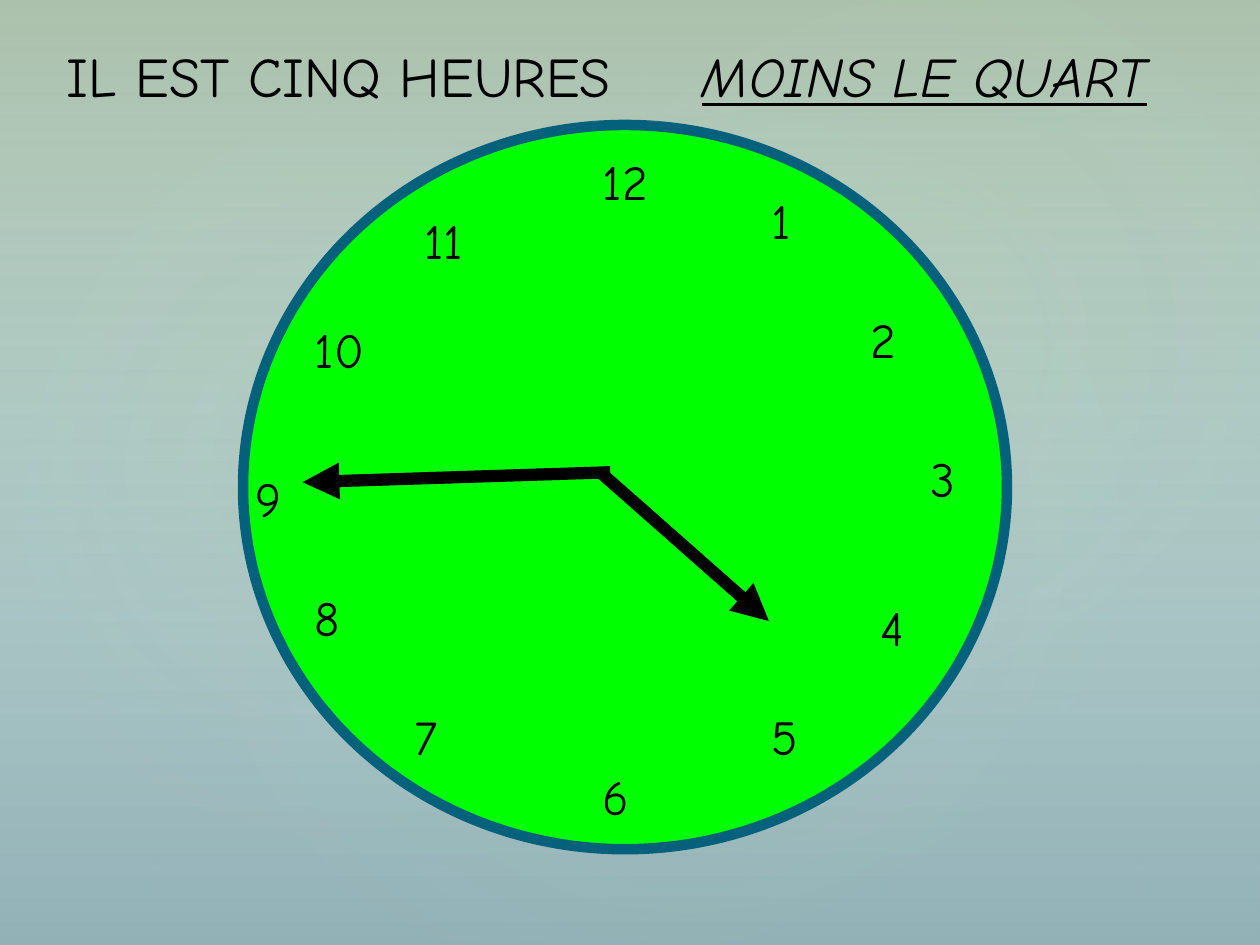
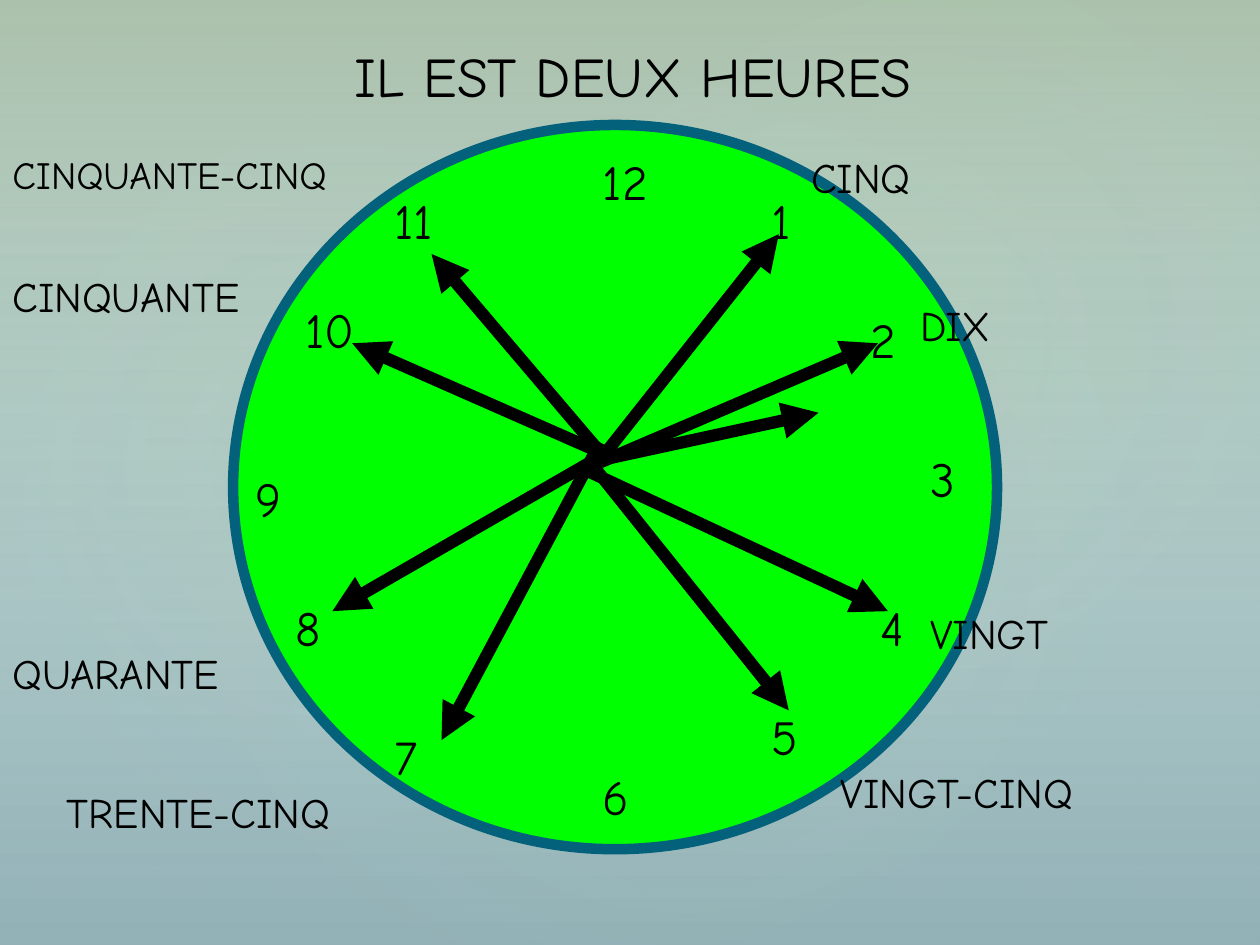
from dataclasses import dataclass

from lxml.etree import SubElement
from pptx import Presentation
from pptx.dml.color import RGBColor
from pptx.enum.shapes import MSO_CONNECTOR, MSO_SHAPE
from pptx.enum.text import MSO_AUTO_SIZE
from pptx.oxml.ns import qn
from pptx.util import Cm, Pt


@dataclass(frozen=True)
class Theme:
    """Colours, font and type sizes of the deck."""

    font: str = "Comic Neue"
    ink: str = "000000"
    face: str = "00FF00"
    rim: str = "04617B"
    sky_top: str = "DDF6F9"
    sky_bottom: str = "8BAAAF"
    olive: str = "546422"
    mist: str = "DBF5F9"
    lime: str = "C9DA92"
    title_size: int = 32
    number_size: int = 28
    label_size: int = 24
    long_label_size: int = 22
    rim_width: int = 6
    hand_width: int = 7


THEME = Theme()
WIDTH, HEIGHT = 25.4, 19.05

GLOWS = [
    (3.81, 2.9, 20.12, 15.85, 328.7, 7),
    (-0.76, 3.25, 15.39, 12.45, 294.3, 8),
    (9.09, 0.33, 18.01, 13.21, 328.7, 8),
]

NUMBERS = {
    12: (11.9, 2.92), 1: (15.3, 3.72), 2: (17.3, 6.12), 3: (18.5, 8.92),
    4: (17.5, 11.92), 5: (15.3, 14.12), 6: (11.9, 15.32), 7: (8.1, 14.12),
    8: (6.1, 11.72), 9: (4.9, 9.32), 10: (6.1, 6.32), 11: (8.3, 4.12),
}
MINUTE_NUMBERS = NUMBERS | {
    7: (7.7, 14.52), 8: (5.7, 11.92), 10: (5.9, 5.92), 11: (7.7, 3.72),
}

QUARTER_HANDS = [
    ((6.1, 9.72), (12.3, 9.52)),
    ((15.5, 12.52), (12.1, 9.52)),
]
MINUTE_HANDS = [
    ((15.7, 4.72), (11.9, 9.52)),
    ((16.5, 8.32), (11.9, 9.32)),
    ((17.7, 6.92), (12.1, 9.32)),
    ((17.9, 12.32), (11.9, 9.52)),
    ((15.9, 14.32), (11.9, 9.32)),
    ((8.9, 14.92), (12.1, 8.92)),
    ((6.7, 12.32), (11.9, 9.32)),
    ((7.1, 6.92), (12.1, 9.12)),
    ((8.7, 5.12), (12.1, 9.12)),
]
MINUTE_LABELS = [
    ("CINQ", 16.1, 2.92, 6, THEME.label_size),
    ("DIX", 18.3, 5.92, 6, THEME.label_size),
    ("VINGT", 18.5, 12.12, 6, THEME.label_size),
    ("VINGT-CINQ", 16.7, 15.32, 7.2, THEME.label_size),
    ("TRENTE-CINQ", 1.1, 15.72, 7.2, THEME.label_size),
    ("QUARANTE", 0, 12.92, 7.2, THEME.label_size),
    ("CINQUANTE", 0, 5.33, 7.2, THEME.label_size),
    ("CINQUANTE-CINQ", 0, 2.92, 8.3, THEME.long_label_size),
]


def rgb(value):
    """Turn a hex string into a colour."""
    return RGBColor.from_string(value)


def set_gradient(fill, stops):
    """Fill from top to bottom with (position, colour) stops."""
    fill.gradient()
    fill.gradient_angle = 270
    for stop, (position, colour) in zip(fill.gradient_stops, stops):
        stop.position = position
        stop.color.rgb = rgb(colour)


def set_opacity(shape, percents):
    """Give each gradient stop of a shape its opacity."""
    colours = shape.element.spPr.iter(qn("a:srgbClr"))
    for colour, percent in zip(list(colours), percents):
        SubElement(colour, qn("a:alpha"), val=str(percent * 1000))


def make_radial(shape):
    """Turn the linear gradient of a shape into a circular one."""
    gradient = shape.element.spPr.find(qn("a:gradFill"))
    gradient.remove(gradient.find(qn("a:lin")))
    circle = SubElement(gradient, qn("a:path"), path="circle")
    centre = dict.fromkeys("ltrb", "50000")
    SubElement(circle, qn("a:fillToRect"), **centre)


def add_shape(page, kind, left, top, width, height):
    """Add a preset shape without shadow or outline."""
    shape = page.shapes.add_shape(kind, Cm(left), Cm(top), Cm(width), Cm(height))
    shape.shadow.inherit = False
    shape.line.fill.background()
    return shape


def decorate_master(deck, page):
    """Set the sky on the master and move the veil and glows there."""
    master = deck.slide_master
    set_gradient(master.background.fill, [(0, THEME.sky_top), (1, THEME.sky_bottom)])

    veil = add_shape(page, MSO_SHAPE.RECTANGLE, 0, 0, WIDTH, HEIGHT)
    set_gradient(veil.fill, [(0, THEME.olive), (1, THEME.mist)])
    set_opacity(veil, (36, 10))
    layers = [veil]
    for left, top, width, height, rotation, opacity in GLOWS:
        glow = add_shape(page, MSO_SHAPE.OVAL, left, top, width, height)
        glow.rotation = rotation
        set_gradient(glow.fill, [(0, THEME.lime), (0.58, THEME.mist)])
        set_opacity(glow, (opacity, 0))
        make_radial(glow)
        layers.append(glow)

    for index, layer in enumerate(layers):
        layer.element.nvSpPr.cNvPr.set("id", str(100 + index))
        master.shapes.element.insert(2 + index, layer.element)


def add_text(page, text, left, top, width, size, stressed=False):
    """Add one line of text, italic and underlined when stressed."""
    height = size * 0.0423 + 0.254
    box = page.shapes.add_textbox(Cm(left), Cm(top), Cm(width), Cm(height))
    frame = box.text_frame
    frame.word_wrap = True
    frame.auto_size = MSO_AUTO_SIZE.SHAPE_TO_FIT_TEXT
    para = frame.paragraphs[0]
    before = SubElement(para._p.get_or_add_pPr(), qn("a:spcBef"))
    SubElement(before, qn("a:spcPct"), val="50000")
    span = para.add_run()
    span.text = text
    span.font.name = THEME.font
    span.font.size = Pt(size)
    span.font.color.rgb = rgb(THEME.ink)
    if stressed:
        span.font.italic = span.font.underline = True


def add_hand(page, tip, hub):
    """Add a clock hand with its arrowhead at the tip."""
    hand = page.shapes.add_connector(MSO_CONNECTOR.STRAIGHT, *map(Cm, tip + hub))
    hand.line.color.rgb = rgb(THEME.ink)
    hand.line.width = Pt(THEME.hand_width)
    SubElement(hand.line._get_or_add_ln(), qn("a:headEnd"), type="triangle")
    SubElement(hand.element.spPr, qn("a:effectLst"))


def add_clock(page, left, numbers, hands):
    """Add the clock face, its hands and its numbers."""
    face = add_shape(page, MSO_SHAPE.OVAL, left, 2.52, 15.4, 14.6)
    face.fill.solid()
    face.fill.fore_color.rgb = rgb(THEME.face)
    face.line.color.rgb = rgb(THEME.rim)
    face.line.width = Pt(THEME.rim_width)
    for tip, hub in hands:
        add_hand(page, tip, hub)
    for number, (x, y) in numbers.items():
        add_text(page, str(number), x, y, 1.6, THEME.number_size)


def add_title(page, text, left, width=13, stressed=False):
    """Add a part of the title line."""
    add_text(page, text, left, 0.72, width, THEME.title_size, stressed)


def build_quarter_page(page):
    """Show a quarter to five."""
    add_clock(page, 4.9, NUMBERS, QUARTER_HANDS)
    add_title(page, "IL EST CINQ HEURES", 1.1)
    add_title(page, "MOINS LE QUART", 13.9, 11.5, stressed=True)


def build_minutes_page(page):
    """Show the minutes after two o'clock."""
    add_clock(page, 4.7, MINUTE_NUMBERS, MINUTE_HANDS)
    add_title(page, "IL EST DEUX HEURES", 6.9)
    for label in MINUTE_LABELS:
        add_text(page, *label)


def main():
    """Build and save the deck."""
    deck = Presentation()
    deck.slide_width, deck.slide_height = Cm(WIDTH), Cm(HEIGHT)
    blank = deck.slide_layouts[6]
    quarter_page = deck.slides.add_slide(blank)
    decorate_master(deck, quarter_page)
    build_quarter_page(quarter_page)
    build_minutes_page(deck.slides.add_slide(blank))
    deck.save("out.pptx")


if __name__ == "__main__":
    main()
